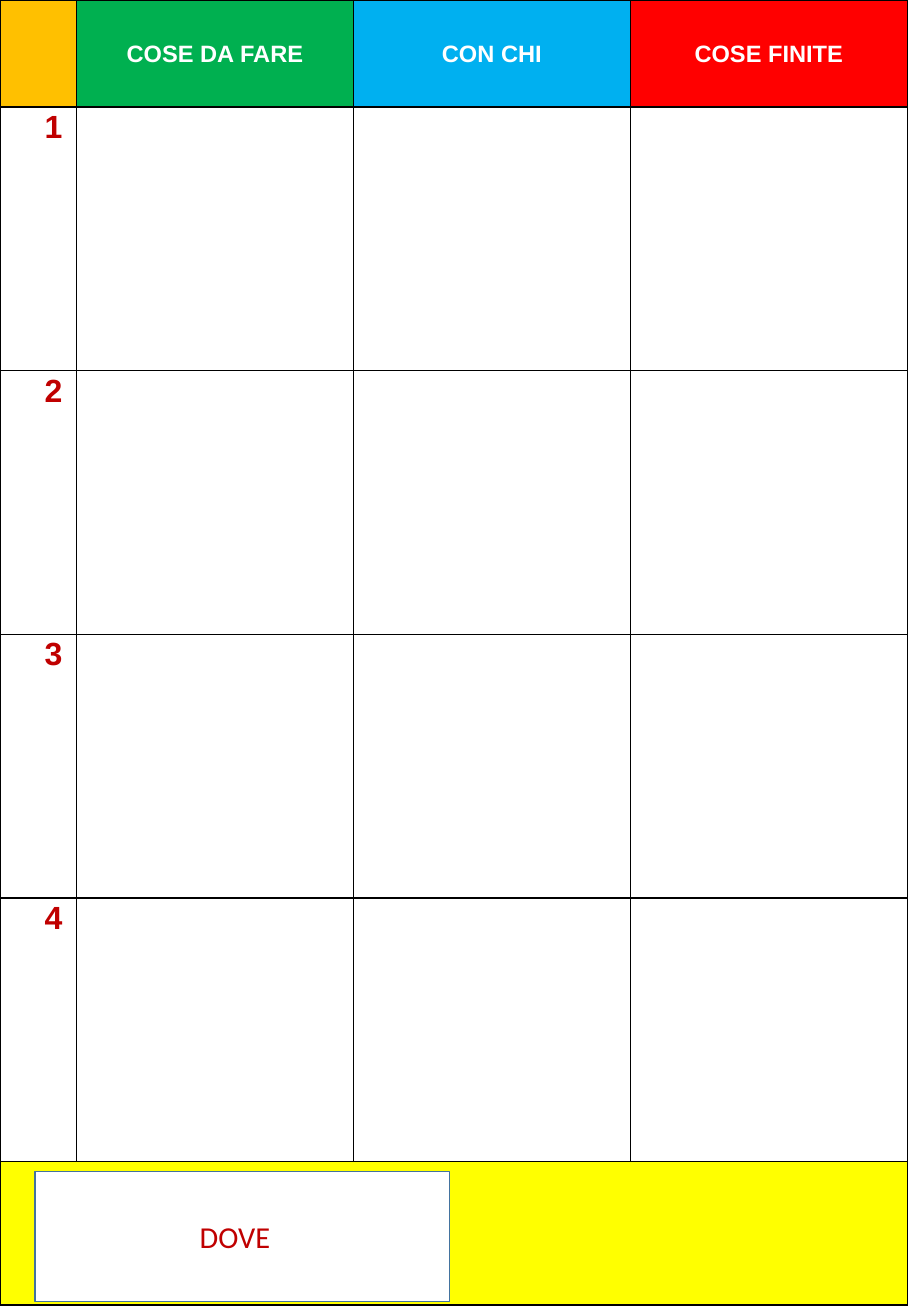
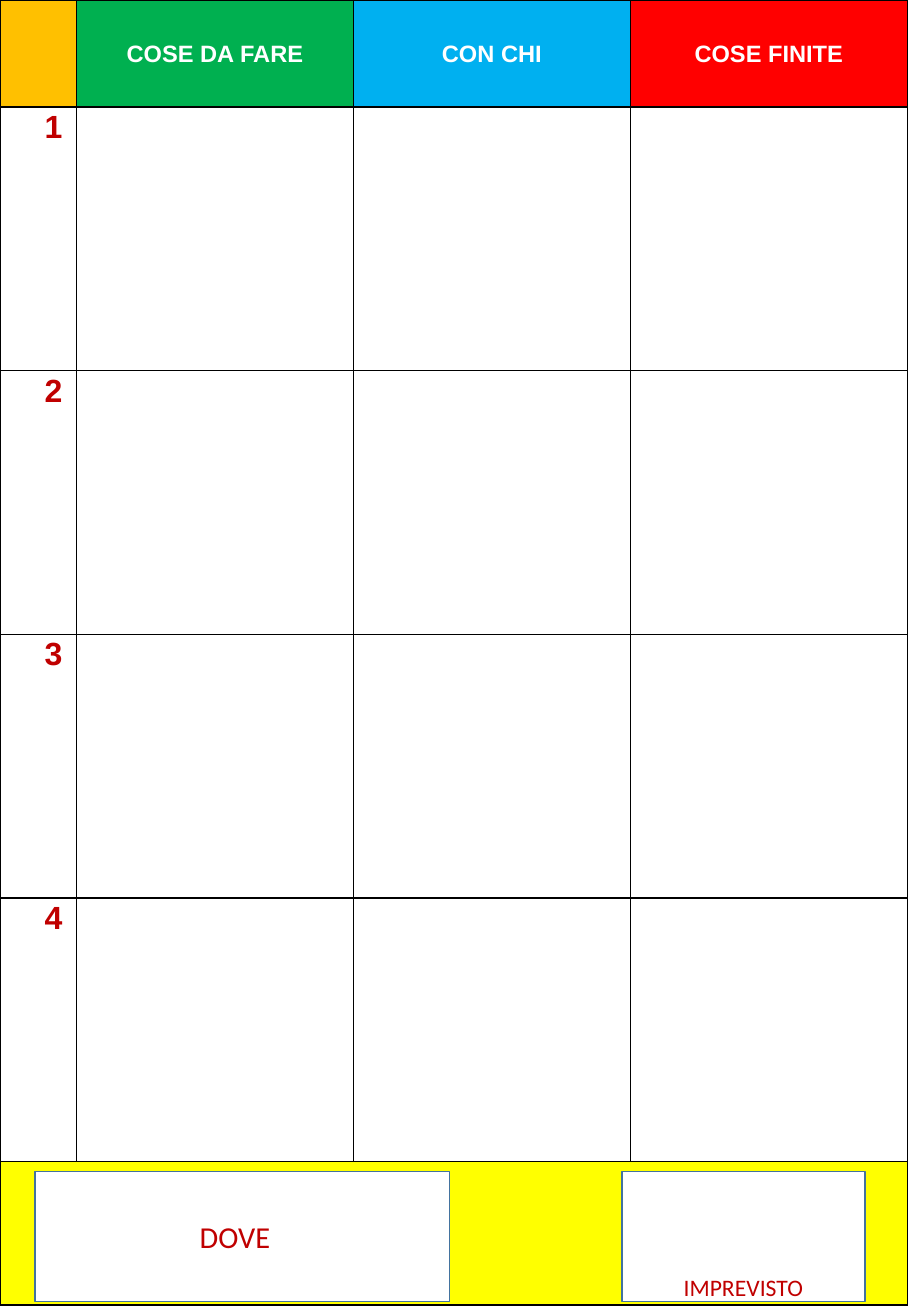
from dataclasses import dataclass

from lxml.etree import SubElement
from pptx import Presentation
from pptx.dml.color import RGBColor
from pptx.enum.shapes import MSO_SHAPE
from pptx.enum.text import MSO_ANCHOR, PP_ALIGN
from pptx.oxml.ns import qn
from pptx.slide import Slide
from pptx.table import _Cell
from pptx.text.text import _Paragraph
from pptx.util import Inches, Pt

COLORS = {
    "white": "FFFFFF", "black": "000000", "orange": "FFC000", "green": "00B050",
    "blue": "00B0F0", "red": "FF0000", "yellow": "FFFF00",
    "label": "C00000", "outline": "43739E",
}
COLUMN_WIDTHS = [0.63, 2.28, 2.28, 2.28]
ROW_HEIGHTS = [0.88] + [2.17] * 4 + [1.18]


@dataclass(frozen=True)
class Heading:
    text: str
    color: str


@dataclass(frozen=True)
class Panel:
    left: float
    width: float
    text: str = ""
    top: float = 9.64
    height: float = 1.07


HEADINGS = [Heading("", "orange"), Heading("COSE DA FARE", "green"),
            Heading("CON CHI", "blue"), Heading("COSE FINITE", "red")]
WHERE = Panel(0.29, 3.41, "DOVE")
UNEXPECTED = Panel(5.12, 2)


def rgb(name: str) -> RGBColor:
    return RGBColor.from_string(COLORS[name])


def style_text(paragraph: _Paragraph, size: int, color: str,
               font: str, bold: bool = False) -> None:
    paragraph.alignment = PP_ALIGN.CENTER
    paragraph.font.size = Pt(size)
    paragraph.font.name = font
    paragraph.font.bold = bold
    paragraph.font.color.rgb = rgb(color)


def style_cell(cell: _Cell, fill: str) -> None:
    """Give a cell black borders on all sides, a fill and narrow margins."""
    properties = cell._tc.get_or_add_tcPr()
    for side in ("lnL", "lnR", "lnT", "lnB"):
        border = SubElement(properties, qn(f"a:{side}"), w=str(Pt(1)))
        solid = SubElement(border, qn("a:solidFill"))
        SubElement(solid, qn("a:srgbClr"), val=COLORS["black"])
    cell.fill.solid()
    cell.fill.fore_color.rgb = rgb(fill)
    cell.margin_left = cell.margin_right = Inches(0.06)
    cell.margin_top = cell.margin_bottom = 0


def write_cell(cell: _Cell, text: str, size: int, color: str) -> None:
    paragraph = cell.text_frame.paragraphs[0]
    paragraph.text = text
    paragraph.line_spacing = 1.07
    style_text(paragraph, size, color, "Arial", bold=True)


def add_plan(slide: Slide) -> None:
    plan = slide.shapes.add_table(
        len(ROW_HEIGHTS), len(COLUMN_WIDTHS), 0, 0,
        Inches(sum(COLUMN_WIDTHS)), Inches(sum(ROW_HEIGHTS))).table
    plan.first_row = plan.horz_banding = False
    for column, width in zip(plan.columns, COLUMN_WIDTHS):
        column.width = Inches(width)
    for row, height in zip(plan.rows, ROW_HEIGHTS):
        row.height = Inches(height)

    last = len(ROW_HEIGHTS) - 1
    for number, row in enumerate(plan.rows):
        for cell, heading in zip(row.cells, HEADINGS):
            fill = heading.color if number == 0 else "yellow" if number == last else "white"
            style_cell(cell, fill)

    # Headings
    for cell, heading in zip(plan.rows[0].cells, HEADINGS):
        if heading.text:
            cell.vertical_anchor = MSO_ANCHOR.MIDDLE
            write_cell(cell, heading.text, 14, "white")

    # Step numbers
    for step in range(1, last):
        cell = plan.cell(step, 0)
        cell.margin_left = Inches(0.31)
        write_cell(cell, str(step), 19, "label")

    # Bottom band
    plan.cell(last, 0).merge(plan.cell(last, len(COLUMN_WIDTHS) - 1))


def add_panel(slide: Slide, panel: Panel) -> None:
    box = slide.shapes.add_shape(
        MSO_SHAPE.RECTANGLE, Inches(panel.left), Inches(panel.top),
        Inches(panel.width), Inches(panel.height))
    box.shadow.inherit = False
    box.fill.solid()
    box.fill.fore_color.rgb = rgb("white")
    box.line.color.rgb = rgb("outline")
    box.line.width = Pt(1)
    if panel.text:
        frame = box.text_frame
        frame.vertical_anchor = MSO_ANCHOR.MIDDLE
        frame.margin_right = Inches(0.22)
        frame.paragraphs[0].text = panel.text
        style_text(frame.paragraphs[0], 18, "label", "Calibri")


def add_unexpected(slide: Slide) -> None:
    add_panel(slide, UNEXPECTED)
    caption = slide.shapes.add_textbox(
        Inches(5.48), Inches(10.43), Inches(1.28), Inches(0.34)).text_frame
    caption.word_wrap = True
    caption.paragraphs[0].text = "IMPREVISTO"
    style_text(caption.paragraphs[0], 14, "label", "Calibri")


def main() -> None:
    presentation = Presentation()
    presentation.slide_width = Inches(7.5)
    presentation.slide_height = Inches(10.83)
    for has_unexpected in (False, True):
        slide = presentation.slides.add_slide(presentation.slide_layouts[6])
        add_plan(slide)
        add_panel(slide, WHERE)
        if has_unexpected:
            add_unexpected(slide)
    presentation.save("out.pptx")


if __name__ == "__main__":
    main()
